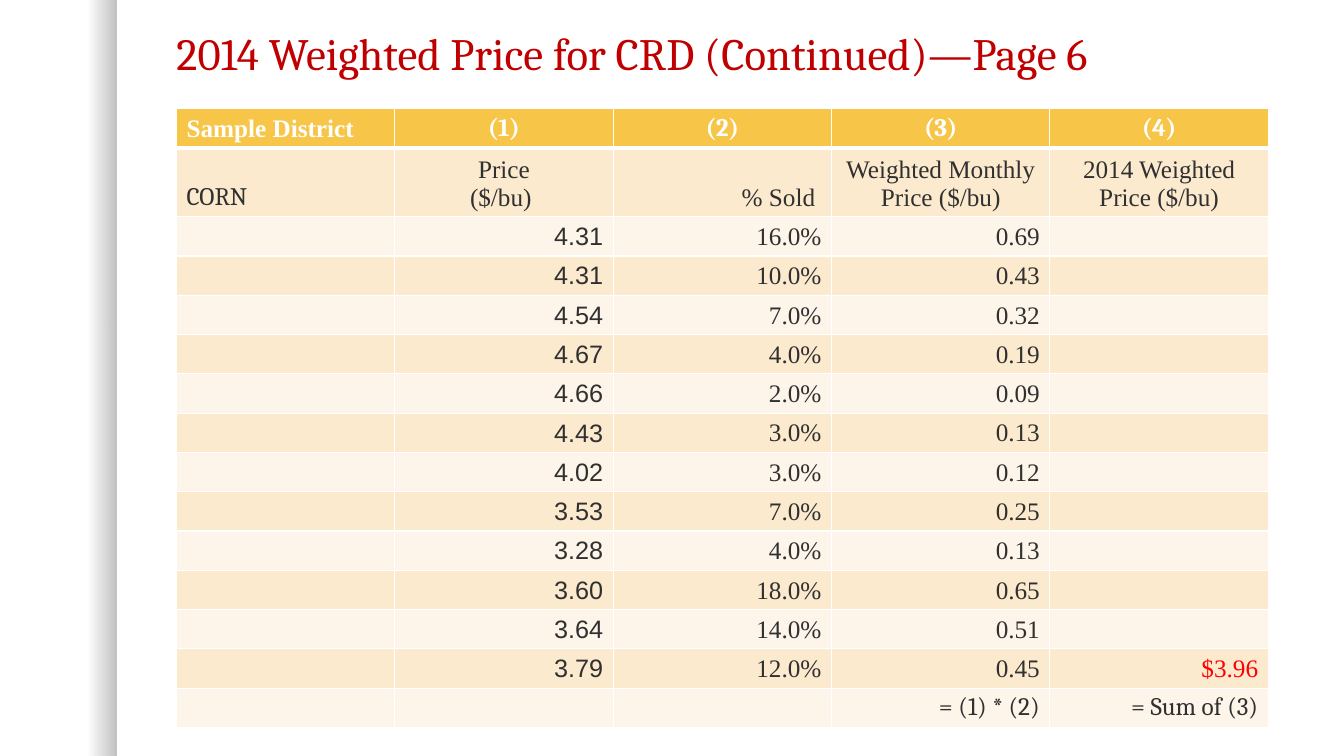
from lxml import etree
from pptx import Presentation
from pptx import util as u
from pptx.dml.color import RGBColor
from pptx.enum import shapes, text
from pptx.oxml import ns

HUES = {"head": "F7C547", "dark": "FCEACF", "light": "FDF5E9", "ink": "303030",
        "title": "C00000", "sum": "FF0000", "white": "FFFFFF", "black": "000000"}
SERIF, ROMAN, SANS = "Cambria", "Times New Roman", "Arial"
LEFT, MID, RIGHT = text.PP_ALIGN.LEFT, text.PP_ALIGN.CENTER, text.PP_ALIGN.RIGHT


def style(para, hue, align, **form):
    para.alignment = align
    for run in para.runs:
        run.font.color.rgb = RGBColor.from_string(HUES[hue])
        for key, val in form.items():
            setattr(run.font, key, val)


def edge(cell, side, width):
    props = cell._tc.get_or_add_tcPr()
    line = etree.SubElement(props, ns.qn("a:ln" + side), w=str(u.Pt(width)))
    fill = etree.SubElement(line, ns.qn("a:solidFill"))
    etree.SubElement(fill, ns.qn("a:srgbClr"), val=HUES["white"])


deck = Presentation()
deck.slide_width, deck.slide_height = u.Inches(13.33), u.Inches(7.5)
slide = deck.slides.add_slide(deck.slide_layouts[5])

# Shaded band on the left
band = slide.shapes.add_shape(shapes.MSO_SHAPE.RECTANGLE, 0, 0,
                              u.Inches(1.16), u.Inches(7.5))
band.shadow.inherit = False
band.line.fill.background()
band.fill.gradient()
band.fill.gradient_angle = 0
for stop, (place, alpha) in zip(band.fill.gradient_stops, [(0.75, 0), (1, 25)]):
    stop.position = place
    stop.color.rgb = RGBColor.from_string(HUES["black"])
for hue, alpha in zip(band._element.spPr.iter(ns.qn("a:srgbClr")), [0, 25]):
    etree.SubElement(hue, ns.qn("a:alpha"), val=str(alpha * 1000))

# Title
title = slide.shapes.title
title.left, title.top = u.Inches(1.65), u.Inches(-0.5)
title.width, title.height = u.Inches(10.77), u.Inches(1.35)
frame = title.text_frame
frame.text = "2014 Weighted Price for CRD (Continued)—Page 6"
frame.vertical_anchor = text.MSO_ANCHOR.BOTTOM
frame.auto_size = text.MSO_AUTO_SIZE.NONE
frame.paragraphs[0].line_spacing = 0.9
style(frame.paragraphs[0], "title", LEFT, name=SERIF, size=u.Pt(32))

# Table values
months = [
    ("4.31", "16.0%", "0.69"), ("4.31", "10.0%", "0.43"), ("4.54", "7.0%", "0.32"),
    ("4.67", "4.0%", "0.19"), ("4.66", "2.0%", "0.09"), ("4.43", "3.0%", "0.13"),
    ("4.02", "3.0%", "0.12"), ("3.53", "7.0%", "0.25"), ("3.28", "4.0%", "0.13"),
    ("3.60", "18.0%", "0.65"), ("3.64", "14.0%", "0.51"), ("3.79", "12.0%", "0.45"),
]
rows = [
    ("Sample District", "(1)", "(2)", "(3)", "(4)"),
    ("CORN", "Price\n($/bu) ", "% Sold ", "Weighted Monthly Price ($/bu)",
     "2014 Weighted Price ($/bu)"),
    *[("", *month, "") for month in months],
    ("", "", "", "= (1) * (2)", "= Sum of (3)"),
]
last = len(rows) - 1
rows[last - 1] = ("", *months[-1], "$3.96")

# Table
table = slide.shapes.add_table(len(rows), 5, u.Inches(1.75), u.Inches(1.08),
                               u.Inches(10.83), u.Inches(6.14)).table
table.horz_banding = False
for col in table.columns:
    col.width = u.Inches(10.83 / 5)
for r, row in enumerate(rows):
    table.rows[r].height = u.Inches(0.68 if r == 1 else 0.39)
    for c, words in enumerate(row):
        cell = table.cell(r, c)
        for side in "LRTB":
            thick = (r, side) in [(0, "B"), (1, "T")]
            edge(cell, side, 3 if thick else 1)
        cell.fill.solid()
        shade = "head" if r == 0 else "dark" if r % 2 else "light"
        cell.fill.fore_color.rgb = RGBColor.from_string(HUES[shade])
        cell.vertical_anchor = text.MSO_ANCHOR.BOTTOM
        if not words:
            cell.margin_top = cell.margin_bottom = 0
            continue
        cell.text = words
        if r == 0:
            font = SERIF if c else ROMAN
        elif r == last or (r, c) == (1, 0):
            font = SERIF
        else:
            font = SANS if r > 1 and c == 1 else ROMAN
        if c == 0:
            align = LEFT
        else:
            align = RIGHT if r > 1 or (r, c) == (1, 2) else MID
        hue = "white" if r == 0 else "sum" if words == "$3.96" else "ink"
        for para in cell.text_frame.paragraphs:
            style(para, hue, align, name=font, size=u.Pt(18), bold=r == 0)

deck.save("out.pptx")
